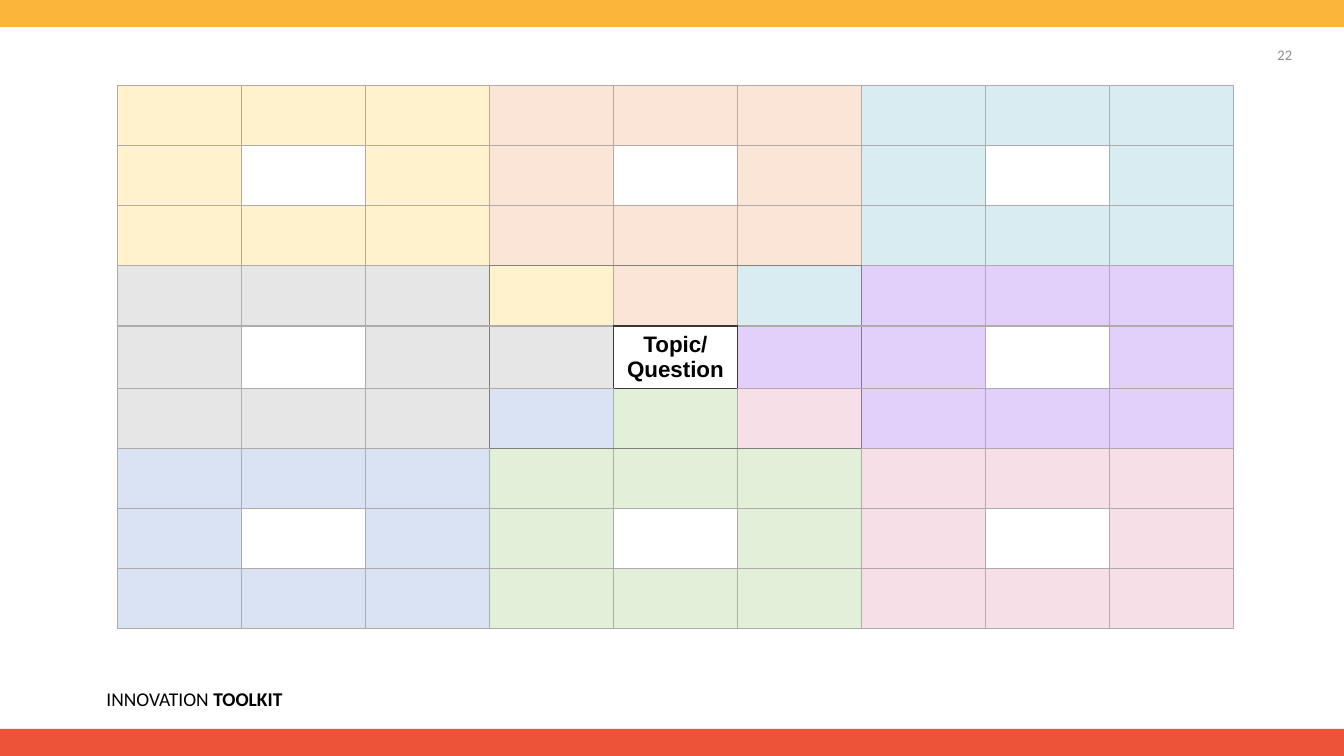
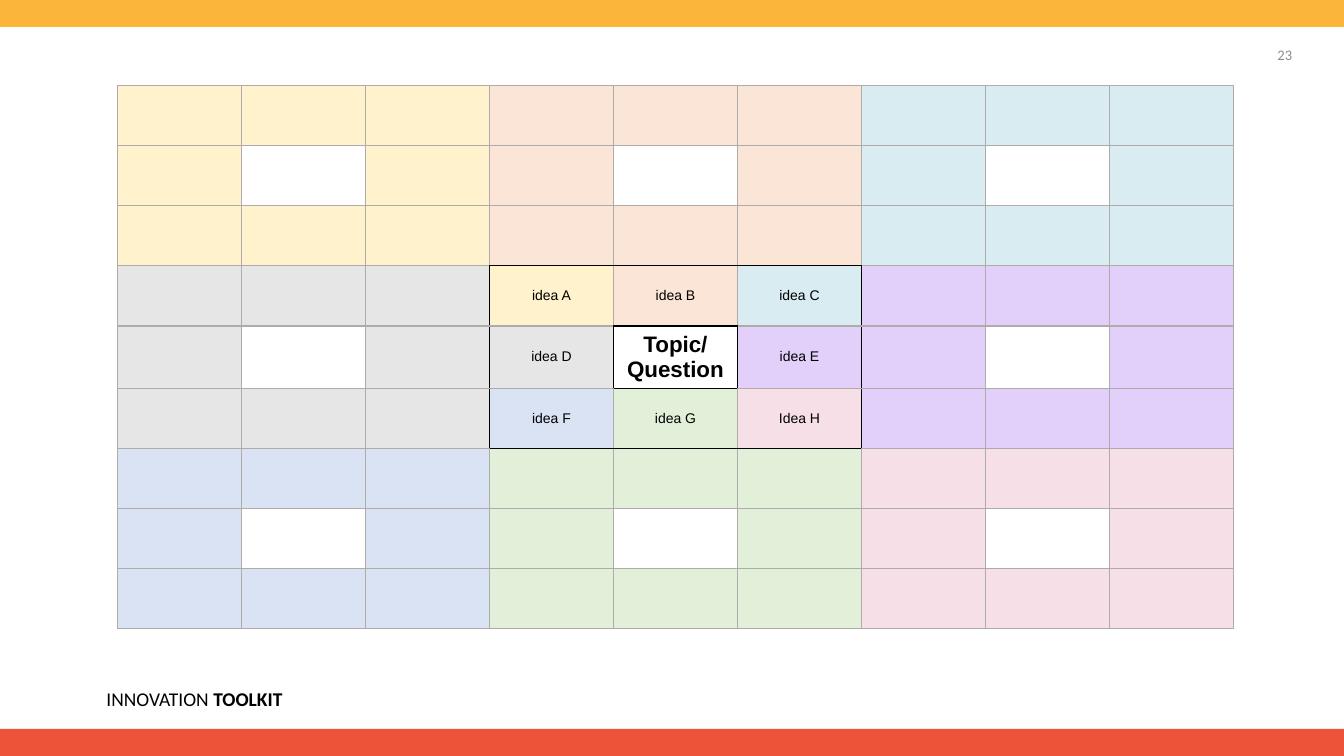
"""Build two idea-grid slides: a blank worksheet and one with its first ideas."""
from lxml.etree import SubElement
from pptx import Presentation
from pptx.dml.color import RGBColor
from pptx.enum.shapes import MSO_SHAPE
from pptx.enum.text import MSO_ANCHOR, PP_ALIGN
from pptx.oxml.ns import qn
from pptx.util import Pt

BLACK = RGBColor(0, 0, 0)
WHITE = RGBColor(255, 255, 255)
AMBER = RGBColor(0xFC, 0xB5, 0x3B)
RED = RGBColor(0xED, 0x53, 0x38)
MUTED = RGBColor(0x8C, 0x8C, 0x8C)
SILVER = RGBColor(0xAF, 0xAB, 0xAB)
GRAY = RGBColor(0x80, 0x80, 0x80)
COAL = RGBColor(0x3B, 0x38, 0x38)
CREAM = RGBColor(0xFF, 0xF2, 0xCC)
PEACH = RGBColor(0xFB, 0xE5, 0xD6)
AQUA = RGBColor(0xD8, 0xEC, 0xF2)
STONE = RGBColor(0xE7, 0xE6, 0xE6)
LILAC = RGBColor(0xE3, 0xD0, 0xFA)
SKY = RGBColor(0xDA, 0xE3, 0xF3)
MINT = RGBColor(0xE2, 0xF0, 0xD9)
ROSE = RGBColor(0xF7, 0xDF, 0xE8)

WIDE, HIGH, BAND = 960, 540, 19.3
COL, ROW, MID = 88.57, 43, 44
LEFT, TOP = 84, 61
TONES = [[CREAM, PEACH, AQUA], [STONE, WHITE, LILAC], [SKY, MINT, ROSE]]
SIDES = {"a:lnL": (0, -1), "a:lnR": (0, 1), "a:lnT": (-1, 0), "a:lnB": (1, 0)}
FOOTER = [("INNOVATION ", False), ("TOOLKIT", True)]
TOPIC = ["Topic/", "Question"]
PAGES = [
    {"num": "22", "ring": GRAY, "core": COAL, "ideas": {}},
    {"num": "23", "ring": BLACK, "core": BLACK, "ideas": {
        (3, 3): "idea A", (3, 4): "idea B", (3, 5): "idea C",
        (4, 3): "idea D", (4, 5): "idea E",
        (5, 3): "idea F", (5, 4): "idea G", (5, 5): "Idea H"}},
]


def write(para, text, size=10, font="Arial", color=BLACK, bold=False, align=PP_ALIGN.LEFT):
    para.alignment = align
    run = para.add_run()
    run.text = text
    run.font.size, run.font.name, run.font.bold = Pt(size), font, bold
    run.font.color.rgb = color


def label(slide, left, top, width, height):
    frame = slide.shapes.add_textbox(Pt(left), Pt(top), Pt(width), Pt(height)).text_frame
    frame.margin_left = frame.margin_right = frame.margin_top = frame.margin_bottom = 0
    frame.word_wrap = True
    return frame


def brand(slide, layout):
    for top, color in ((0, AMBER), (HIGH - BAND, RED)):
        band = slide.shapes.add_shape(MSO_SHAPE.RECTANGLE, 0, Pt(top), Pt(WIDE), Pt(BAND))
        band.shadow.inherit = False
        band.fill.solid()
        band.fill.fore_color.rgb = color
        band.line.fill.background()
    para = label(slide, 76, 490.5, 167, 17).paragraphs[0]
    for text, bold in FOOTER:
        write(para, text, size=13.9, font="Calibri", bold=bold)
    for shape in list(slide.shapes):
        layout.shapes.element.append(shape.element)


def zone(row, col):
    if (row, col) == (4, 4):
        return 2
    return int(row // 3 == 1 and col // 3 == 1)


def tone(row, col):
    if row % 3 == col % 3 == 1:
        return WHITE
    if zone(row, col):
        return TONES[row % 3][col % 3]
    return TONES[row // 3][col // 3]


def edge(cell, row, col, page):
    props = cell._tc.get_or_add_tcPr()
    hues = [SILVER, page["ring"], page["core"]]
    for tag, (down, right) in SIDES.items():
        here, there = zone(row, col), zone(row + down, col + right)
        hue = SILVER if here == there else hues[max(here, there)]
        line = SubElement(props, qn(tag), w=str(Pt(1)))
        fill = SubElement(line, qn("a:solidFill"))
        SubElement(fill, qn("a:srgbClr"), val=str(hue))


def grid(slide, page):
    shape = slide.shapes.add_table(9, 9, Pt(LEFT), Pt(TOP), Pt(9 * COL), Pt(8 * ROW + MID))
    table = shape.table
    table.first_row = table.horz_banding = False
    for col in table.columns:
        col.width = Pt(COL)
    for row, line in enumerate(table.rows):
        line.height = Pt(MID if row == 4 else ROW)
        for col, cell in enumerate(line.cells):
            edge(cell, row, col, page)
            cell.fill.solid()
            cell.fill.fore_color.rgb = tone(row, col)
            cell.vertical_anchor = MSO_ANCHOR.MIDDLE
            cell.margin_left = cell.margin_right = Pt(6.5)
            cell.margin_top = cell.margin_bottom = Pt(3)
            if (row, col) in page["ideas"]:
                write(cell.text_frame.paragraphs[0], page["ideas"][row, col], align=PP_ALIGN.CENTER)
    frame = table.cell(4, 4).text_frame
    for para, text in zip((frame.paragraphs[0], frame.add_paragraph()), TOPIC):
        write(para, text, size=16, bold=True, align=PP_ALIGN.CENTER)


def main():
    deck = Presentation()
    deck.slide_width, deck.slide_height = Pt(WIDE), Pt(HIGH)
    layout = deck.slide_layouts[6]
    for spot, page in enumerate(PAGES):
        slide = deck.slides.add_slide(layout)
        if spot == 0:
            brand(slide, layout)
        frame = label(slide, 866, 29.5, 57, 19.5)
        frame.vertical_anchor = MSO_ANCHOR.MIDDLE
        write(frame.paragraphs[0], page["num"], size=10.4, font="Calibri", color=MUTED, align=PP_ALIGN.RIGHT)
        grid(slide, page)
    deck.save("out.pptx")


if __name__ == "__main__":
    main()
